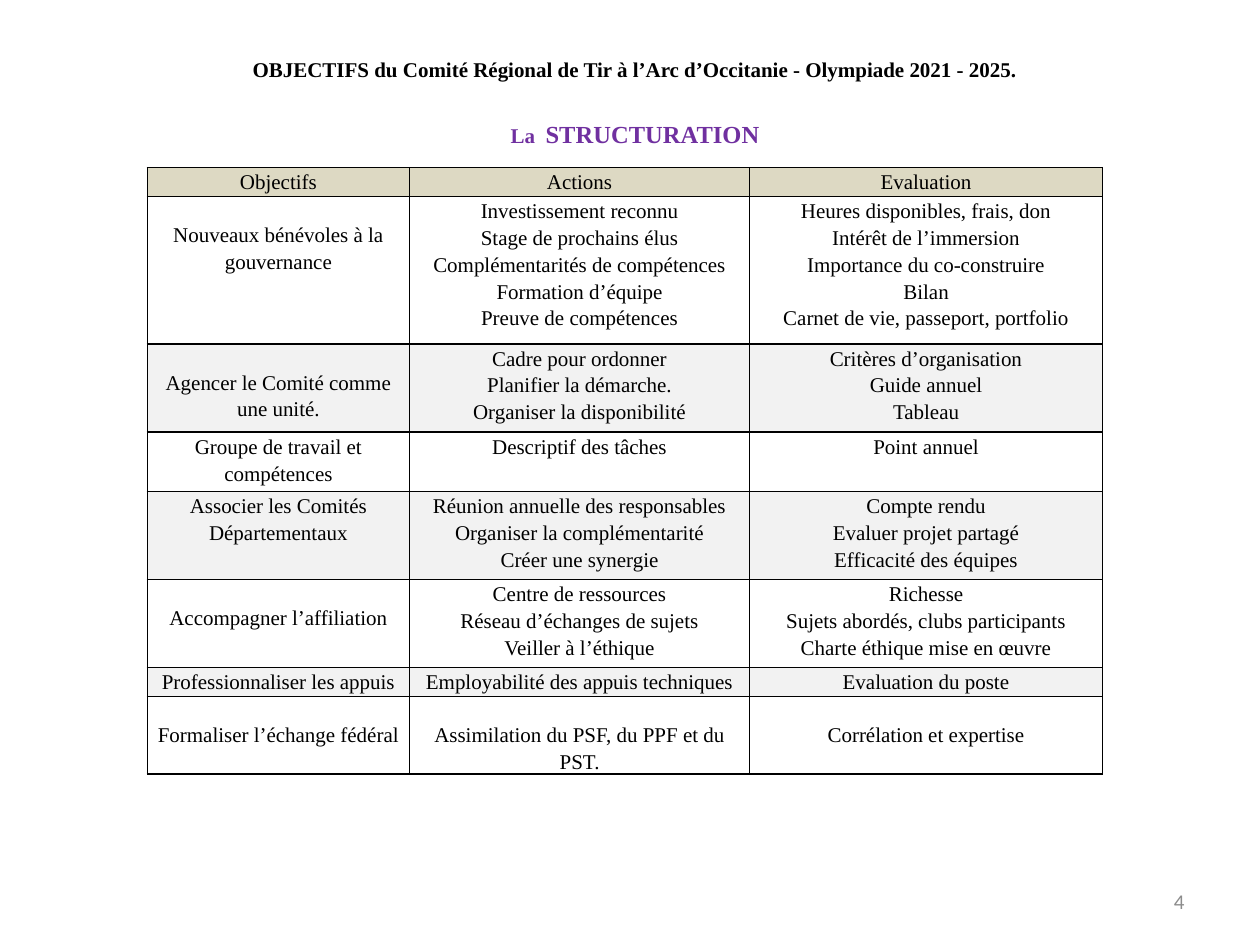
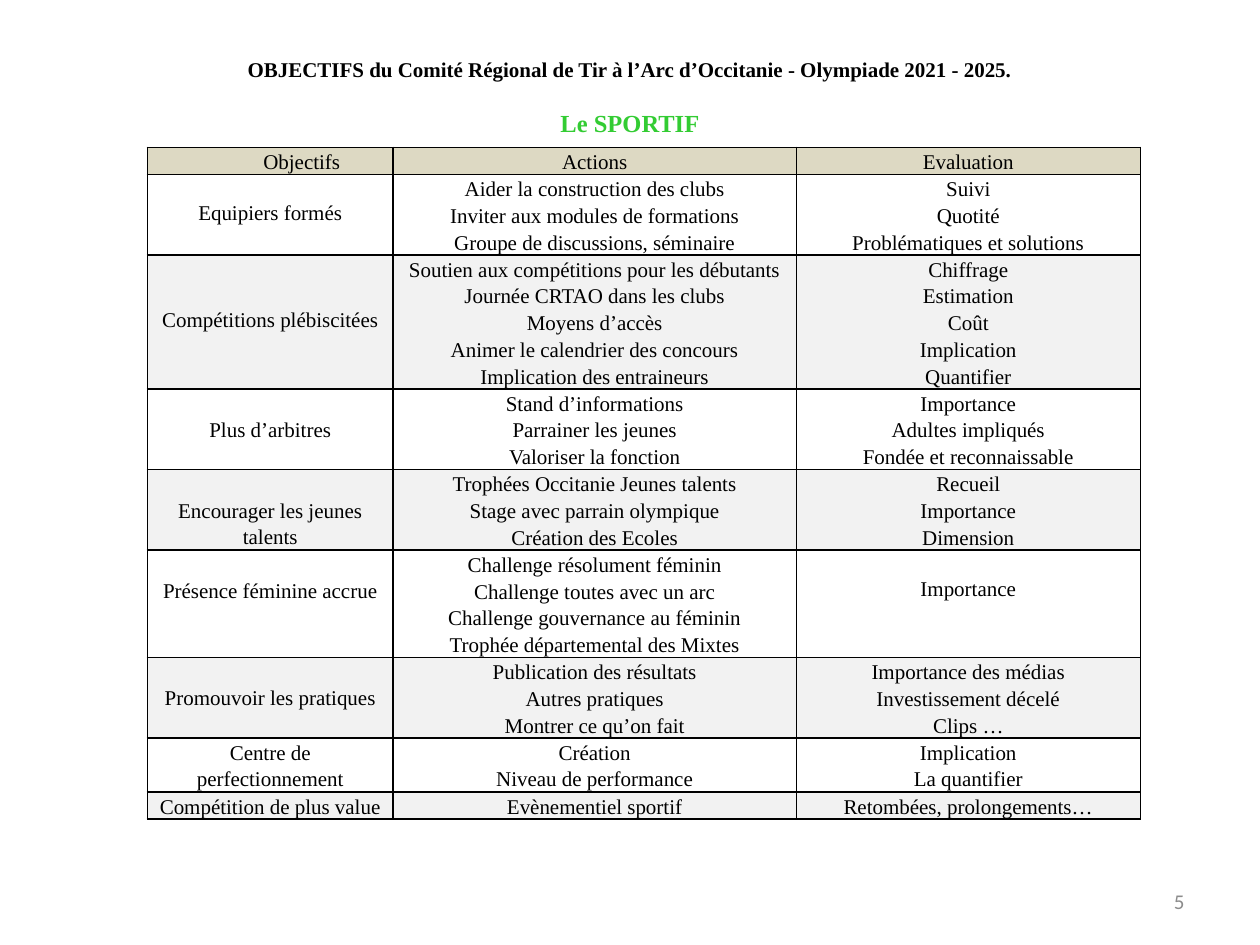
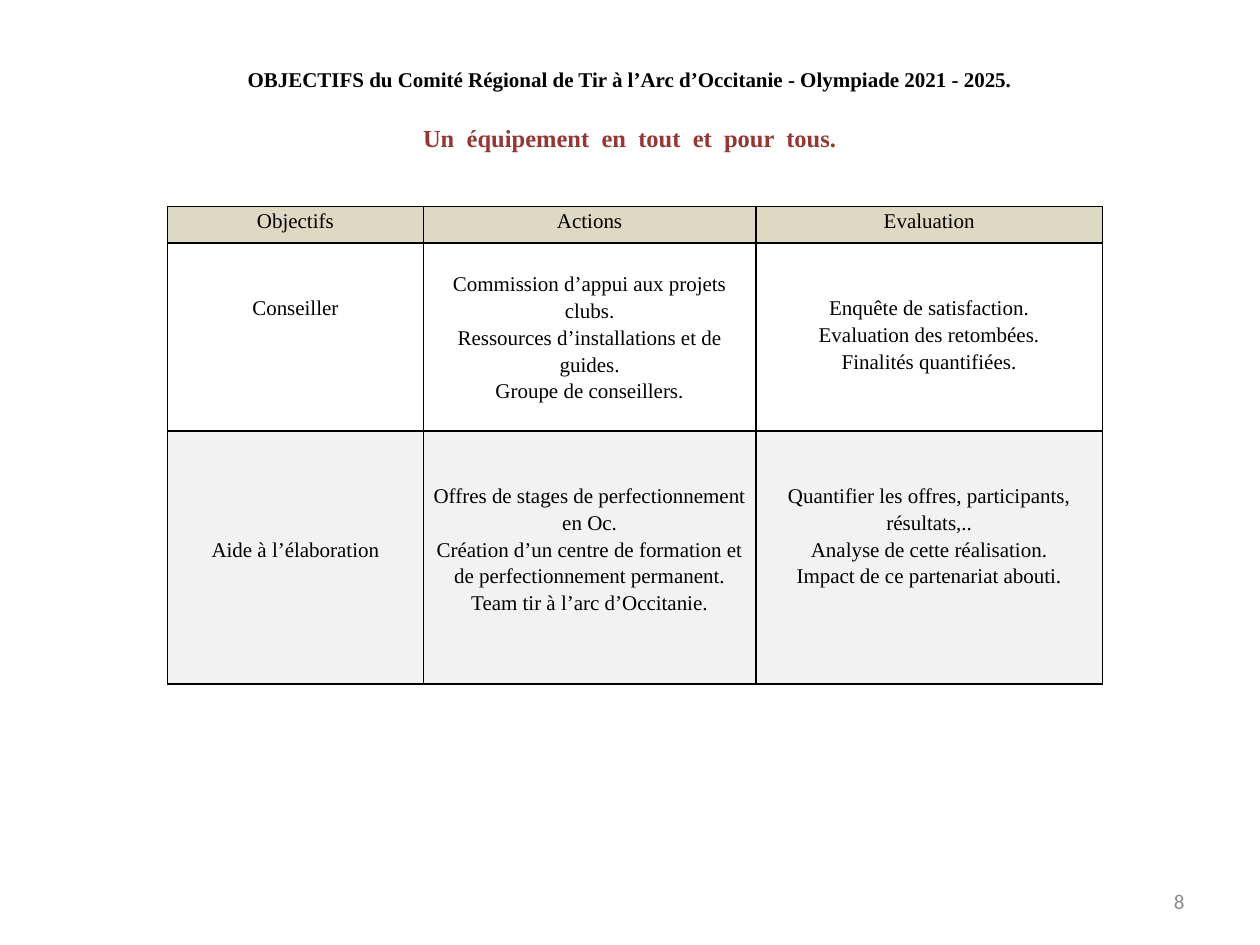
from dataclasses import dataclass

from lxml.etree import SubElement
from pptx import Presentation
from pptx.dml.color import RGBColor
from pptx.enum.text import MSO_ANCHOR, MSO_AUTO_SIZE, PP_ALIGN
from pptx.oxml.ns import qn
from pptx.slide import Slide
from pptx.table import _Cell
from pptx.text.text import _Paragraph
from pptx.util import Inches, Pt


@dataclass(frozen=True)
class Theme:
    serif: str = "Times New Roman"
    sans: str = "Calibri"
    ink: str = "000000"
    header_fill: str = "DDD9C3"
    band_fill: str = "F2F2F2"
    page_number: str = "8C8C8C"
    structure: str = "7030A0"
    sport: str = "33CC33"
    equipment: str = "953735"
    text_size: int = 12
    heading_size: int = 14
    border_width: int = 1
    line_spacing: float = 1.15


THEME = Theme()
TITLE = "OBJECTIFS du Comité Régional de Tir à l’Arc d’Occitanie - Olympiade 2021 - 2025."
TITLE_ONLY = 5

# Gaps above the first line of a cell, in inches
ONE_LINE = 0.19
FULL_LINE = 0.21
TWO_LINES = 0.4
FOUR_LINES = 0.83


@dataclass(frozen=True)
class Entry:
    """Lines of one table cell, with a gap above and an indent at the left in inches."""
    text: str
    lead: float = 0
    indent: float = 0


@dataclass(frozen=True)
class Row:
    height: float
    objective: Entry
    actions: Entry
    evaluation: Entry


@dataclass(frozen=True)
class Section:
    number: int
    heading: list[tuple[str, int]]
    color: str
    title_box: tuple[float, float, float, float]
    heading_gap: int
    table_left: float
    table_top: float
    columns: list[float]
    inset: float
    rows: list[Row]


def header(height: float, indent: float = 0) -> Row:
    return Row(height, Entry("Objectifs", indent=indent), Entry("Actions"), Entry("Evaluation"))


SECTIONS = [
    Section(
        4, [("La  ", THEME.text_size), ("STRUCTURATION", THEME.heading_size)], THEME.structure,
        (0.39, 0.4, 9.3, 0.85), 21, 1.17, 1.33, [2.08, 2.7, 2.8], 0.07,
        [
            header(0.23),
            Row(1.17, Entry("Nouveaux bénévoles à la gouvernance", ONE_LINE),
                Entry("Investissement reconnu\nStage de prochains élus\n"
                      "Complémentarités de compétences\nFormation d’équipe\n"
                      "Preuve de compétences"),
                Entry("Heures disponibles, frais, don\nIntérêt de l’immersion\n"
                      "Importance du co-construire\nBilan\n"
                      "Carnet de vie, passeport, portfolio")),
            Row(0.7, Entry("Agencer le Comité comme une unité.", ONE_LINE),
                Entry("Cadre pour ordonner\nPlanifier la démarche.\nOrganiser la disponibilité"),
                Entry("Critères d’organisation\nGuide annuel\nTableau")),
            Row(0.47, Entry("Groupe de travail et compétences"),
                Entry("Descriptif des tâches"), Entry("Point annuel")),
            Row(0.7, Entry("Associer les Comités Départementaux"),
                Entry("Réunion annuelle des responsables\nOrganiser la complémentarité\n"
                      "Créer une synergie"),
                Entry("Compte rendu\nEvaluer projet partagé\nEfficacité des équipes")),
            Row(0.7, Entry("Accompagner l’affiliation", ONE_LINE),
                Entry("Centre de ressources\nRéseau d’échanges de sujets\nVeiller à l’éthique"),
                Entry("Richesse\nSujets abordés, clubs participants\n"
                      "Charte éthique mise en œuvre")),
            Row(0.23, Entry("Professionnaliser les appuis"),
                Entry("Employabilité des appuis techniques"), Entry("Evaluation du poste")),
            Row(0.61, Entry("Formaliser l’échange fédéral", ONE_LINE),
                Entry("Assimilation du PSF, du PPF et du PST.", ONE_LINE),
                Entry("Corrélation et expertise", ONE_LINE)),
        ],
    ),
    Section(
        5, [("Le SPORTIF", THEME.heading_size)], THEME.sport,
        (0.5, 0.4, 9, 0.75), 15, 1.17, 1.17, [1.95, 3.2, 2.73], 0.06,
        [
            header(0.21, indent=0.5),
            Row(0.64, Entry("Equipiers formés", ONE_LINE),
                Entry("Aider la construction des clubs\nInviter aux modules de formations\n"
                      "Groupe de discussions, séminaire"),
                Entry("Suivi\nQuotité\nProblématiques et solutions")),
            Row(1.06, Entry("Compétitions plébiscitées", TWO_LINES),
                Entry("Soutien aux compétitions pour les débutants\n"
                      "Journée CRTAO dans les clubs\nMoyens d’accès\n"
                      "Animer le calendrier des concours\nImplication des entraineurs"),
                Entry("Chiffrage\nEstimation\nCoût\nImplication\nQuantifier")),
            Row(0.64, Entry("Plus d’arbitres", FULL_LINE),
                Entry("Stand d’informations\nParrainer les jeunes\nValoriser la fonction"),
                Entry("Importance\nAdultes impliqués\nFondée et reconnaissable")),
            Row(0.64, Entry("Encourager les jeunes talents", FULL_LINE),
                Entry("Trophées Occitanie Jeunes talents\nStage avec parrain olympique\n"
                      "Création des Ecoles"),
                Entry("Recueil\nImportance\nDimension")),
            Row(0.85, Entry("Présence féminine accrue", FULL_LINE),
                Entry("Challenge résolument féminin\nChallenge toutes avec un arc\n"
                      "Challenge gouvernance au féminin\nTrophée départemental des Mixtes"),
                Entry("Importance", ONE_LINE)),
            Row(0.64, Entry("Promouvoir les pratiques", FULL_LINE),
                Entry("Publication des résultats\nAutres pratiques\nMontrer ce qu’on fait"),
                Entry("Importance des médias\nInvestissement décelé\nClips …")),
            Row(0.43, Entry("Centre de perfectionnement"),
                Entry("Création\nNiveau de performance"),
                Entry("Implication\nLa quantifier")),
            Row(0.21, Entry("Compétition de plus value"),
                Entry("Evènementiel sportif"), Entry("Retombées, prolongements…")),
        ],
    ),
    Section(
        8, [("Un  équipement  en  tout  et  pour  tous.", THEME.heading_size)], THEME.equipment,
        (0.5, 0.48, 9, 0.85), 18, 1.33, 1.64, [2.03, 2.64, 2.75], 0.07,
        [
            header(0.29),
            Row(1.49, Entry("Conseiller", TWO_LINES),
                Entry("Commission d’appui aux projets clubs.\n"
                      "Ressources d’installations et de guides.\nGroupe de conseillers.",
                      FULL_LINE),
                Entry("Enquête de satisfaction.\nEvaluation des retombées.\n"
                      "Finalités quantifiées.", TWO_LINES)),
            Row(2.01, Entry("Aide à l’élaboration", FOUR_LINES),
                Entry("Offres de stages de perfectionnement en Oc.\n"
                      "Création d’un centre de formation et de perfectionnement permanent.\n"
                      "Team tir à l’arc d’Occitanie.", TWO_LINES),
                Entry("Quantifier les offres, participants, résultats,..\n"
                      "Analyse de cette réalisation.\nImpact de ce partenariat abouti.",
                      TWO_LINES)),
        ],
    ),
]


def format_runs(paragraph: _Paragraph, color: str, size: int = THEME.text_size,
                font: str = THEME.serif, bold: bool = False) -> None:
    for run in paragraph.runs:
        run.font.name = font
        run.font.size = Pt(size)
        run.font.bold = bold
        run.font.color.rgb = RGBColor.from_string(color)


def draw_title(slide: Slide, section: Section) -> None:
    title = slide.shapes.title
    title.left, title.top, title.width, title.height = map(Inches, section.title_box)
    frame = title.text_frame
    frame.auto_size = MSO_AUTO_SIZE.NONE
    frame.vertical_anchor = MSO_ANCHOR.TOP
    frame.text = TITLE
    format_runs(frame.paragraphs[0], THEME.ink, bold=True)
    heading = frame.add_paragraph()
    heading.space_before = Pt(section.heading_gap)
    for words, size in section.heading:
        heading.add_run().text = words
    format_runs(heading, section.color, bold=True)
    for run, (_, size) in zip(heading.runs, section.heading):
        run.font.size = Pt(size)
    for paragraph in frame.paragraphs:
        paragraph.alignment = PP_ALIGN.CENTER


def add_borders(cell: _Cell) -> None:
    properties = cell._tc.get_or_add_tcPr()
    for side in ("a:lnL", "a:lnR", "a:lnT", "a:lnB"):
        line = SubElement(properties, qn(side), w=str(Pt(THEME.border_width)))
        fill = SubElement(line, qn("a:solidFill"))
        SubElement(fill, qn("a:srgbClr"), val=THEME.ink)


def fill_cell(cell: _Cell, entry: Entry, row_index: int, inset: float) -> None:
    cell.margin_left = Inches(inset + entry.indent)
    cell.margin_right = Inches(inset)
    cell.margin_top = Inches(entry.lead)
    cell.margin_bottom = 0
    cell.text_frame.text = entry.text
    for paragraph in cell.text_frame.paragraphs:
        paragraph.alignment = PP_ALIGN.CENTER
        paragraph.line_spacing = THEME.line_spacing
        format_runs(paragraph, THEME.ink)
    add_borders(cell)
    if row_index % 2:
        cell.fill.background()
    else:
        cell.fill.solid()
        color = THEME.band_fill if row_index else THEME.header_fill
        cell.fill.fore_color.rgb = RGBColor.from_string(color)


def draw_objectives(slide: Slide, section: Section) -> None:
    width = sum(section.columns)
    height = sum(row.height for row in section.rows)
    table = slide.shapes.add_table(
        len(section.rows), len(section.columns), Inches(section.table_left),
        Inches(section.table_top), Inches(width), Inches(height)).table
    table.first_row = table.horz_banding = False
    for column, column_width in zip(table.columns, section.columns):
        column.width = Inches(column_width)
    for index, row in enumerate(section.rows):
        table.rows[index].height = Inches(row.height)
        for position, entry in enumerate((row.objective, row.actions, row.evaluation)):
            fill_cell(table.cell(index, position), entry, index, section.inset)


def draw_page_number(slide: Slide, number: int) -> None:
    footer = slide.shapes.add_textbox(Inches(7.17), Inches(6.95), Inches(2.33), Inches(0.4))
    frame = footer.text_frame
    frame.word_wrap = True
    frame.vertical_anchor = MSO_ANCHOR.MIDDLE
    frame.text = str(number)
    frame.paragraphs[0].alignment = PP_ALIGN.RIGHT
    format_runs(frame.paragraphs[0], THEME.page_number, font=THEME.sans)


def main() -> None:
    deck = Presentation()
    deck.slide_width, deck.slide_height = Inches(10), Inches(7.5)
    for section in SECTIONS:
        slide = deck.slides.add_slide(deck.slide_layouts[TITLE_ONLY])
        draw_title(slide, section)
        draw_objectives(slide, section)
        draw_page_number(slide, section.number)
    deck.save("out.pptx")


if __name__ == "__main__":
    main()
